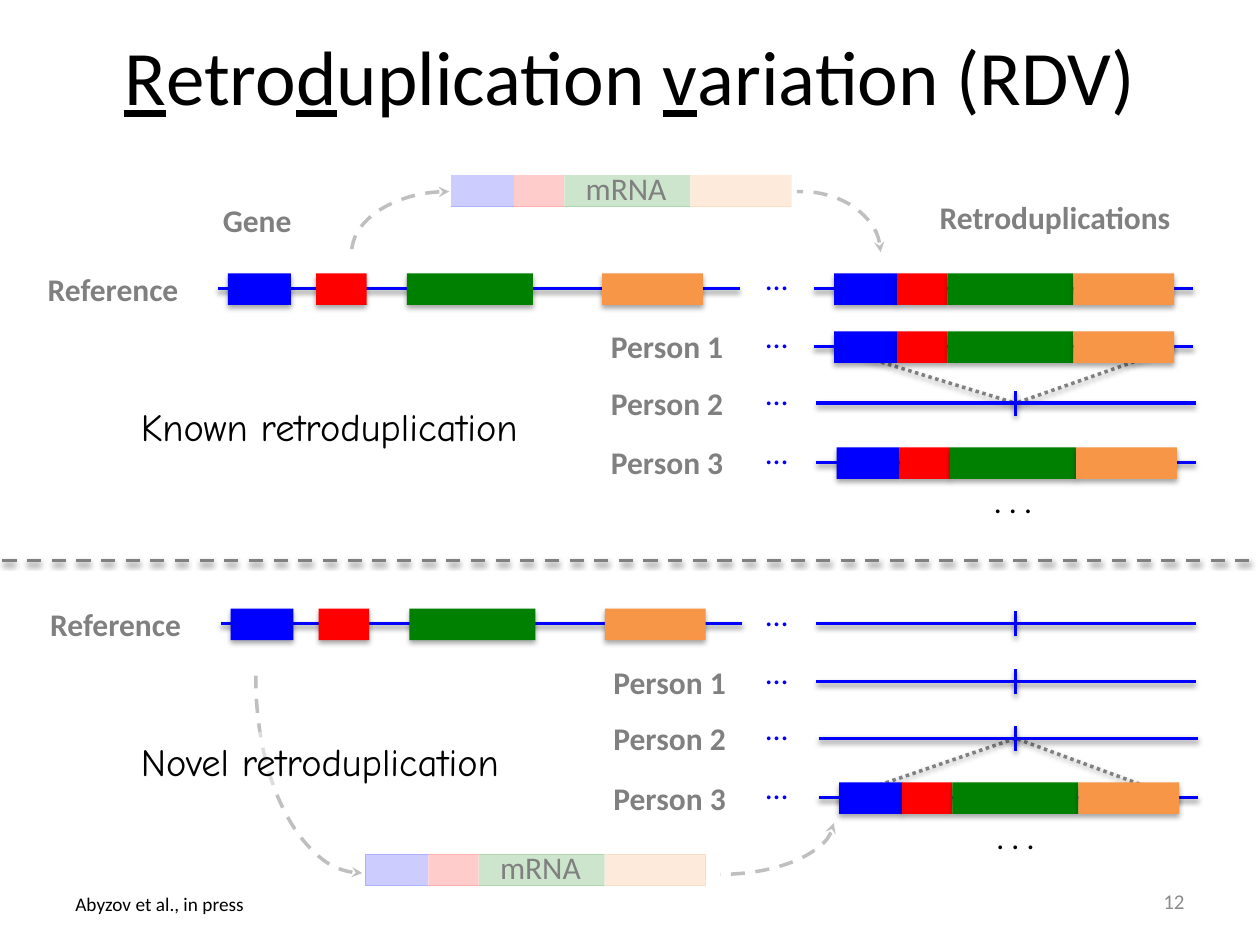
import pptx
import pptx.dml.color
import pptx.enum.dml
import pptx.enum.shapes
import pptx.enum.text
import pptx.oxml
import pptx.oxml.ns
import pptx.util

SHAPE = pptx.enum.shapes.MSO_SHAPE
DASH = pptx.enum.dml.MSO_LINE
ALIGN = pptx.enum.text.PP_ALIGN
ANCHOR = pptx.enum.text.MSO_ANCHOR
FIT = pptx.enum.text.MSO_AUTO_SIZE
BLUE, GRAY, PALE, BLACK, WHITE = "0000FF", "808080", "BFBFBF", "000000", "FFFFFF"

# Content: positions are in inches and converted once by cm()
TITLE = [("R", True), ("etro", False), ("d", True), ("uplication ", False),
         ("v", True), ("ariation (RDV)", False)]
EXONS = [(0.5, BLUE), (0.4, "FF0000"), (1.0, "008000"), (0.8, "F79646")]
GENE_OFFSETS = [0.08, 0.78, 1.5, 3.05]
BOX_H = 0.25
SITE_X = 8.06  # insertion site

# Each panel: gene start, name x, rows of (name, y, line start, has retroduplication)
PANELS = [
    dict(gene_x=1.73, ref_x=0.28, person_x=4.75, more=(7.79, 3.78), rows=[
        ("Reference", 2.29, 6.46, True), ("Person 1", 2.75, 6.46, True),
        ("Person 2", 3.2, 6.48, False), ("Person 3", 3.67, 6.48, True)]),
    dict(gene_x=1.75, ref_x=0.3, person_x=4.77, more=(7.81, 6.44), rows=[
        ("Reference", 4.95, 6.48, False), ("Person 1", 5.41, 6.48, False),
        ("Person 2", 5.86, 6.5, False), ("Person 3", 6.33, 6.5, True)]),
]
# Dotted links: two ends on the retroduplication, then height of the site
LINKS = [(6.66, 9.36, 6.34, 5.86), (6.62, 9.32, 2.76, 3.2)]
MRNAS = [(2.9, 6.78), (3.58, 1.39)]
# Arrows: left, top, width, height, start and end adjustments, flipped
FIRST_ARROW = (2.03, 3.83, 1.69, 3.1, 54.01, 108.66, False)
ARROWS = [(2.79, 1.52, 1.55, 0.98, 54.01, 108.66, True),
          (5.73, 1.52, 1.26, 0.98, 0.46, 56.37, True),
          (4.81, 6.07, 1.81, 0.87, 1.03, 53.98, False)]
# Free labels: text, left, top, width, height, size, colour, bold, font
LABELS = [
    ("Known retroduplication", 1.02, 3.15, 3.56, 0.47, 22, BLACK, False, "Comic Neue"),
    ("Novel retroduplication", 1.02, 5.81, 3.43, 0.47, 22, BLACK, False, "Comic Neue"),
    ("Gene", 1.67, 1.55, 0.75, 0.4, 18, GRAY, True, "Calibri"),
    ("Retroduplications", 7.36, 1.52, 2.07, 0.4, 18, GRAY, True, "Calibri"),
    ("Abyzov et al., in press", 0.5, 7.03, 1.56, 0.29, 11, BLACK, False, "Calibri"),
]


def cm(inches):
    return pptx.util.Cm(inches * 2.54)


def rgb(color):
    return pptx.dml.color.RGBColor.from_string(color)


def xml(text):
    return pptx.oxml.parse_xml(text.replace(" ", f' {pptx.oxml.ns.nsdecls("a")} ', 1))


def set_fill(s, color, opacity=100):
    s.fill.solid()
    s.fill.fore_color.rgb = rgb(color)
    if opacity < 100:
        clr = s.fill._xPr.find(".//" + pptx.oxml.ns.qn("a:srgbClr"))
        clr.append(xml(f'<a:alpha val="{opacity * 1000}"/>'))


def add_shadow(s, opacity, distance):
    s._element.spPr.append(xml(
        f'<a:effectLst ><a:outerShdw blurRad="{pptx.util.Pt(3.1)}" '
        f'dist="{pptx.util.Pt(distance)}" dir="5400000" rotWithShape="0">'
        f'<a:srgbClr val="{BLACK}"><a:alpha val="{opacity * 1000}"/></a:srgbClr>'
        '</a:outerShdw></a:effectLst>'))


def set_line(s, color, dash=None):
    s.line.color.rgb = rgb(color)
    s.line.width = pptx.util.Pt(2)
    if dash:
        s.line.dash_style = dash


def line(x1, y1, x2, y2, color=BLUE, dash=None):
    s = shapes.add_connector(pptx.enum.shapes.MSO_CONNECTOR.STRAIGHT,
                             cm(x1), cm(y1), cm(x2), cm(y2))
    set_line(s, color, dash)
    add_shadow(s, 38, 1.6)


def box(x, y, w, color, opacity=100, shadow=False):
    s = shapes.add_shape(SHAPE.RECTANGLE, cm(x), cm(y), cm(w), cm(BOX_H))
    set_fill(s, color, opacity)
    s.line.fill.background()
    if shadow:
        add_shadow(s, 35, 1.8)
    else:
        s.shadow.inherit = False


def packed_exons(x, y, shadow):
    for w, color in EXONS:
        box(x, y, w, color, shadow=shadow)
        x += w


def style(r, size, color, bold=False, font="Calibri"):
    r.font.size, r.font.bold, r.font.name = pptx.util.Pt(size), bold, font
    r.font.color.rgb = rgb(color)


def label(text, x, y, w, h=0.4, size=18, color=GRAY, bold=False, font="Calibri"):
    s = shapes.add_textbox(cm(x), cm(y), cm(w), cm(h))
    tf = s.text_frame
    tf.text = text
    tf.word_wrap = False
    tf.auto_size = FIT.SHAPE_TO_FIT_TEXT
    style(tf.paragraphs[0].runs[0], size, color, bold, font)
    return s


def arrow(x, y, w, h, start, end, flipped):
    s = shapes.add_shape(SHAPE.ARC, cm(x), cm(y), cm(w), cm(h))
    s.adjustments[0], s.adjustments[1] = start, end
    s.fill.background()
    s.shadow.inherit = False
    set_line(s, PALE, DASH.DASH)
    s.line._get_or_add_ln().append(xml('<a:headEnd type="stealth"/>'))
    if flipped:
        s._element.spPr.find(pptx.oxml.ns.qn("a:xfrm")).set("flipV", "1")


def mrna(x, y):
    packed_exons(x, y, False)
    box(x, y, sum(w for w, _ in EXONS), WHITE, 80)
    label("mRNA", x + 0.97, y - 0.1, 0.85)


prs = pptx.Presentation()
prs.slide_width, prs.slide_height = cm(10), cm(7.5)
shapes = prs.slides.add_slide(prs.slide_layouts[6]).shapes

# Arrow and links that lie behind the rest
arrow(*FIRST_ARROW)
for left, right, y, site_y in LINKS:
    for x in (left, right):
        line(x, y, SITE_X, site_y, GRAY, DASH.ROUND_DOT)

# Title
s = shapes.add_textbox(cm(0.5), cm(-0.03), cm(9), cm(1.25))
tf = s.text_frame
tf.word_wrap = True
tf.vertical_anchor = ANCHOR.MIDDLE
p = tf.paragraphs[0]
p.alignment = ALIGN.CENTER
for text, underlined in TITLE:
    r = p.add_run()
    r.text = text
    style(r, 44, BLACK)
    r.font.underline = underlined

# Panels: gene on the reference, then one line per genome
for panel in PANELS:
    gene_x, gene_y = panel["gene_x"], panel["rows"][0][1]
    line(gene_x, gene_y, gene_x + 4.14, gene_y)
    for offset, (w, color) in zip(GENE_OFFSETS, EXONS):
        box(gene_x + offset, gene_y - 0.12, w, color, shadow=True)
    for name, y, x, present in panel["rows"]:
        line(x, y, x + 3.01, y)
        if present:
            packed_exons(x + 0.16, y - 0.12, True)
        else:
            line(SITE_X, y + 0.1, SITE_X, y - 0.1)
        is_ref = name == "Reference"
        label(name, panel["ref_x" if is_ref else "person_x"], y - 0.2,
              1.27 if is_ref else 1.11, bold=True)
        label("…", 5.98, y - 0.28, 0.38, color=BLUE)
    label(". . .", *panel["more"], 0.51, color=BLACK)

# Divider
line(0.02, 4.45, 9.97, 4.45, GRAY, DASH.DASH)

# Labels; the novel one veils the arrow behind it
for item in LABELS:
    s = label(*item)
    if item[0].startswith("Novel"):
        set_fill(s, WHITE, 48)

# Messenger RNAs and their arrows
for x, y in MRNAS:
    mrna(x, y)
for item in ARROWS:
    arrow(*item)

# Page number
s = label("12", 7.17, 6.95, 2.33, size=12, color="8C8C8C")
tf = s.text_frame
tf.auto_size = FIT.NONE
tf.word_wrap = True
tf.vertical_anchor = ANCHOR.MIDDLE
tf.paragraphs[0].alignment = ALIGN.RIGHT

prs.save("out.pptx")
